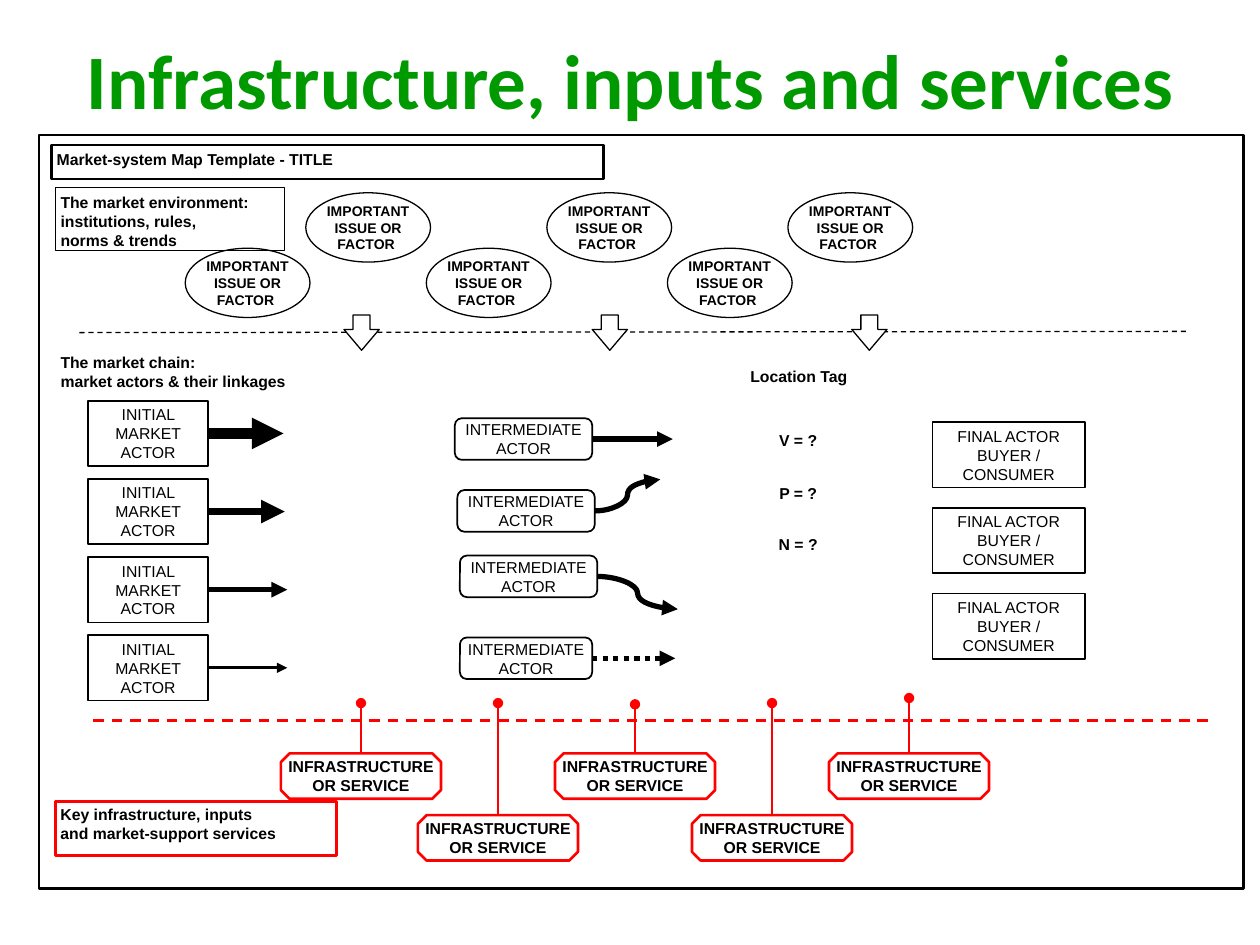
from lxml import etree
from pptx import Presentation
from pptx import util as u
from pptx.dml import color
from pptx.enum import dml, shapes, text
from pptx.oxml import ns

COLORS = {"title": "009900", "ink": "000000", "paper": "FFFFFF", "service": "FF0000"}
SHAPE = shapes.MSO_SHAPE
DASH = dml.MSO_LINE
CURVE = shapes.MSO_CONNECTOR.CURVE
CENTER = text.PP_ALIGN.CENTER
MIDDLE = text.MSO_ANCHOR.MIDDLE
TOP = text.MSO_ANCHOR.TOP


def rgb(name):
    return color.RGBColor.from_string(COLORS[name])


def write(shape, words, size=9, bold=False, align=None, anchor=TOP,
          margins=(0.04, 0.04, 0.04, 0.04), font="Arial", ink="ink"):
    frame = shape.text_frame
    frame.word_wrap = True
    frame.vertical_anchor = anchor
    (frame.margin_left, frame.margin_top,
     frame.margin_right, frame.margin_bottom) = map(u.Inches, margins)
    paragraph = frame.paragraphs[0]
    paragraph.text = words
    paragraph.alignment = align or text.PP_ALIGN.LEFT
    paragraph.font.name = font
    paragraph.font.size = u.Pt(size)
    paragraph.font.bold = bold
    paragraph.font.color.rgb = rgb(ink)


def add_box(slide, origin, kind, left, top, width, height,
            line="ink", weight=1, fill=None, adjustments=()):
    """Add a preset shape at an offset from the region's origin."""
    shape = slide.shapes.add_shape(
        kind, origin[0] + u.Inches(left), origin[1] + u.Inches(top),
        u.Inches(width), u.Inches(height))
    shape.shadow.inherit = False
    for index, value in enumerate(adjustments):
        shape.adjustments[index] = value
    if fill:
        shape.fill.solid()
        shape.fill.fore_color.rgb = rgb(fill)
    else:
        shape.fill.background()
    if line:
        shape.line.color.rgb = rgb(line)
        shape.line.width = u.Pt(weight)
    else:
        shape.line.fill.background()
    return shape


def add_line(slide, origin, start, end, weight, ink="ink", dash=None, tip=None,
             kind=shapes.MSO_CONNECTOR.STRAIGHT):
    points = [origin[axis] + u.Inches(point[axis])
              for point in (start, end) for axis in (0, 1)]
    connector = slide.shapes.add_connector(kind, *points)
    connector.line.color.rgb = rgb(ink)
    connector.line.width = u.Pt(weight)
    if dash:
        connector.line.dash_style = dash
    if tip:
        outline = connector.line._get_or_add_ln()
        etree.SubElement(outline, ns.qn("a:tailEnd"), type=tip)
    etree.SubElement(connector._element.spPr, ns.qn("a:effectLst"))


def add_title(slide, left, top, width, height):
    box = slide.shapes.add_textbox(left, top, width, height)
    write(box, "Infrastructure, inputs and services", size=44, bold=True, align=CENTER,
          anchor=MIDDLE, margins=(0.1, 0.05, 0.1, 0.05), font="Calibri", ink="title")


def add_map_frame(slide, *origin):
    add_box(slide, origin, SHAPE.RECTANGLE, 0, 0, 9.56, 5.98, weight=1.5)
    heading = add_box(slide, origin, SHAPE.RECTANGLE, 0.1, 0.08, 4.38, 0.27,
                      weight=1.5, fill="paper")
    write(heading, "Market-system Map Template - TITLE", bold=True)


def add_environment(slide, *origin):
    label = add_box(slide, origin, SHAPE.RECTANGLE, 0, 0, 1.82, 0.5, weight=0.75)
    write(label, "The market environment:\ninstitutions, rules,\nnorms & trends", bold=True)

    # Issues alternate between a lower and an upper row
    for index in range(6):
        issue = add_box(slide, origin, SHAPE.OVAL, 1.03 + index * 5.74 / 6,
                        0.04 if index % 2 else 0.48, 0.99, 0.55, weight=0.75)
        write(issue, "IMPORTANT ISSUE OR FACTOR ", size=8, bold=True, align=CENTER,
              anchor=MIDDLE, margins=(0, 0, 0, 0))

    # Border with the market chain
    add_line(slide, origin, (0.19, 1.15), (9, 1.14), 0.75, dash=DASH.DASH)
    for left in (2.29, 4.26, 6.32):
        add_box(slide, origin, SHAPE.DOWN_ARROW, left, 1.01, 0.28, 0.28,
                weight=0.75, fill="paper", adjustments=(0.48, 0.59))


def add_market_chain(slide, *origin):
    label = slide.shapes.add_textbox(*origin, u.Inches(2.19), u.Inches(0.31))
    write(label, "The market chain:\nmarket actors & their linkages", bold=True,
          margins=(0.04, 0.03, 0.04, 0))

    # Initial actors, with ever thinner links
    for index, (weight, end) in enumerate(((6, 1.81), (4.5, 1.82), (3, 1.84), (1.5, 1.84))):
        top = 0.41 + index * 0.62
        add_line(slide, origin, (1.21, top + 0.26), (end, top + 0.26), weight, tip="triangle")
        actor = add_box(slide, origin, SHAPE.RECTANGLE, 0.26, top, 0.95, 0.52)
        write(actor, "INITIAL MARKET ACTOR", align=CENTER, anchor=MIDDLE)

    # Intermediate actors: left, top, width, then the link's reach, drop and style
    intermediates = (
        (3.17, 0.55, 1.09, 0.64, 0, {}),
        (3.19, 1.12, 1.09, 0.52, -0.25, {"kind": CURVE}),
        (3.21, 1.64, 1.09, 0.64, 0.26, {"kind": CURVE}),
        (3.21, 2.29, 1.05, 0.66, 0, {"dash": DASH.ROUND_DOT}),
    )
    for left, top, width, reach, drop, style in intermediates:
        actor = add_box(slide, origin, SHAPE.ROUNDED_RECTANGLE, left, top, width, 0.33)
        write(actor, "INTERMEDIATE ACTOR", align=CENTER, anchor=MIDDLE, margins=(0, 0, 0, 0))
        start = (left + width, top + 0.165)
        add_line(slide, origin, start, (start[0] + reach, start[1] + drop), 3,
                 tip="triangle", **style)

    # Location tag and its values
    tags = (("Location Tag", 5.22, 0.1, 1.36, 0.26), ("V = ?", 5.56, 0.61, 0.67, 0.22),
            ("P = ?", 5.56, 1.03, 0.67, 0.22), ("N = ?", 5.56, 1.43, 0.67, 0.22))
    for words, *place in tags:
        tag = add_box(slide, origin, SHAPE.RECTANGLE, *place, line=None, fill="paper")
        write(tag, words, bold=True, align=CENTER)

    # Final actors
    for index in range(3):
        actor = add_box(slide, origin, SHAPE.RECTANGLE, 6.96, 0.58 + index * 0.68, 1.21, 0.52)
        write(actor, "FINAL ACTOR BUYER / CONSUMER", align=CENTER, anchor=MIDDLE)


def add_services(slide, *origin):
    label = add_box(slide, origin, SHAPE.RECTANGLE, 0, 0.82, 2.23, 0.43,
                    line="service", weight=1.5)
    write(label, "Key infrastructure, inputs\nand market-support services", bold=True,
          margins=(0.04, 0.03, 0.04, 0))
    add_line(slide, origin, (0.3, 0.18), (9.16, 0.18), 1.5, ink="service", dash=DASH.DASH)

    # Services alternate between two rows, each pinned to the chain
    for index, pin_top in enumerate((0.04, 0.04, 0.05, 0.04, 0)):
        left = 1.79 + index * 4.35 / 4
        top = 0.93 if index % 2 else 0.44
        service = add_box(slide, origin, SHAPE.OCTAGON, left, top, 1.27, 0.36,
                          line="service", weight=1.5, adjustments=(0.19,))
        write(service, "INFRASTRUCTURE OR SERVICE", bold=True, align=CENTER,
              anchor=MIDDLE, margins=(0, 0, 0, 0))
        add_line(slide, origin, (left + 0.635, top), (left + 0.635, pin_top), 1.5,
                 ink="service", tip="oval")


def main():
    presentation = Presentation()
    presentation.slide_width = u.Inches(10)
    presentation.slide_height = u.Inches(7.5)
    slide = presentation.slides.add_slide(presentation.slide_layouts[6])
    add_title(slide, u.Inches(0.51), u.Inches(0), u.Inches(9), u.Inches(1.25))
    add_map_frame(slide, u.Inches(0.31), u.Inches(1.07))
    add_environment(slide, u.Inches(0.44), u.Inches(1.49))
    add_market_chain(slide, u.Inches(0.44), u.Inches(2.77))
    add_services(slide, u.Inches(0.44), u.Inches(5.54))
    presentation.save("out.pptx")


if __name__ == "__main__":
    main()
